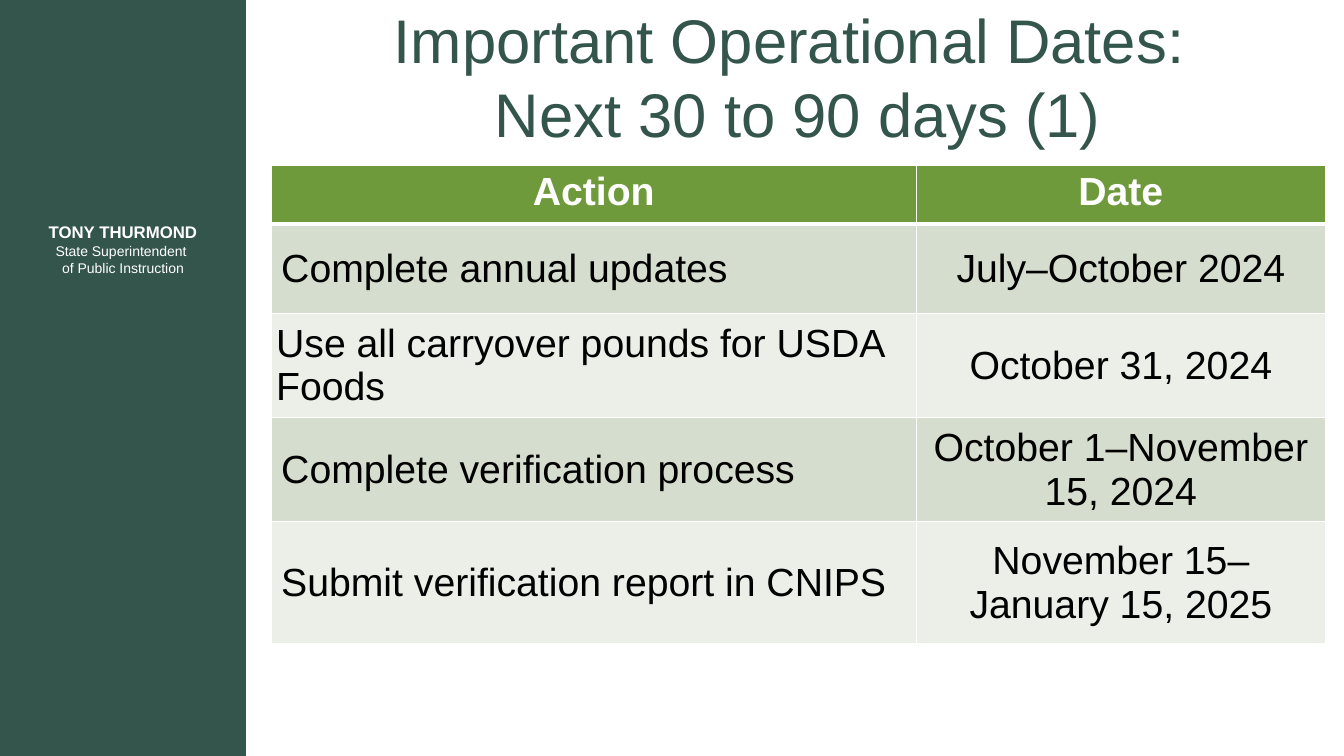
from lxml import etree
from pptx import Presentation
from pptx.dml.color import RGBColor
from pptx.enum.shapes import MSO_SHAPE
from pptx.enum.text import MSO_ANCHOR, MSO_AUTO_SIZE, PP_ALIGN
from pptx.oxml.ns import qn
from pptx.util import Pt

RECT = MSO_SHAPE.RECTANGLE
MIDDLE, TOP = MSO_ANCHOR.MIDDLE, MSO_ANCHOR.TOP
CENTER, LEFT = PP_ALIGN.CENTER, PP_ALIGN.LEFT
NO_FIT = MSO_AUTO_SIZE.NONE
GREEN, WHITE, BLACK = "34554C", "FFFFFF", "000000"


def rgb(value):
    return RGBColor.from_string(value)


def style(p, align, color, **fmt):
    p.alignment = align
    for r in p.runs:
        r.font.color.rgb = rgb(color)
        for name, value in {"name": "Arial", **fmt}.items():
            setattr(r.font, name, value)


prs = Presentation()
prs.slide_width, prs.slide_height = Pt(960), Pt(540)
s = prs.slides.add_slide(prs.slide_layouts[5])
s.background.fill.solid()
s.background.fill.fore_color.rgb = rgb(WHITE)

title = s.shapes.title
title.left, title.top, title.width, title.height = Pt(193.7), Pt(12.2), Pt(753), Pt(84.2)
tf = title.text_frame
tf.text = "Important Operational Dates: \vNext 30 to 90 days (1)"
tf.auto_size, tf.vertical_anchor = NO_FIT, MIDDLE
style(tf.paragraphs[0], CENTER, GREEN, size=Pt(44))

sp = s.shapes.add_shape(RECT, 0, 0, Pt(175.7), prs.slide_height)
sp.shadow.inherit = False
sp.fill.solid()
sp.fill.fore_color.rgb = rgb(GREEN)
sp.line.fill.background()

tf = s.shapes.add_textbox(Pt(20.9), Pt(150.5), Pt(133.9), Pt(54.7)).text_frame
tf.word_wrap, tf.vertical_anchor = True, MIDDLE
p = tf.paragraphs[0]
p.text = "TONY THURMOND\vState Superintendent \vof Public Instruction"
style(p, CENTER, WHITE, size=Pt(10))
p.runs[0].font.size, p.runs[0].font.bold = Pt(12), True

rows = [
    ("Action", "Date"),
    ("Complete annual updates", "July–October 2024"),
    ("Use all carryover pounds for USDA Foods", "October 31, 2024"),
    ("Complete verification process", "October 1–November 15, 2024"),
    ("Submit verification report in CNIPS", "November 15–January 15, 2025"),
]
heights = [41.8, 64, 72.7, 72.7, 87.1]
widths = [460.8, 292.2]
table = s.shapes.add_table(
    len(rows), len(widths), Pt(193.7), Pt(118.1), Pt(sum(widths)), Pt(sum(heights))
).table
for column, width in zip(table.columns, widths):
    column.width = Pt(width)

for i, (texts, height) in enumerate(zip(rows, heights)):
    table.rows[i].height = Pt(height)
    header = i == 0
    fill = "6E9A3B" if header else ("EBEFE8", "D5DECE")[i % 2]
    borders = {"lnL": 1, "lnR": 1, "lnT": 3 if i == 1 else 1, "lnB": 3 if header else 1}
    for j, text in enumerate(texts):
        cell = table.cell(i, j)
        cell.text = text
        cell.vertical_anchor = TOP if header else MIDDLE
        if i == 2:
            cell.margin_left = cell.margin_right = Pt(3.6)
        tcPr = cell._tc.get_or_add_tcPr()
        for tag, weight in borders.items():
            ln = etree.SubElement(tcPr, qn(f"a:{tag}"), w=str(Pt(weight)))
            solid = etree.SubElement(ln, qn("a:solidFill"))
            etree.SubElement(solid, qn("a:srgbClr"), val=WHITE)
        cell.fill.solid()
        cell.fill.fore_color.rgb = rgb(fill)
        style(cell.text_frame.paragraphs[0], CENTER if header or j else LEFT,
              WHITE if header else BLACK, size=Pt(28), bold=header)

prs.save("out.pptx")
